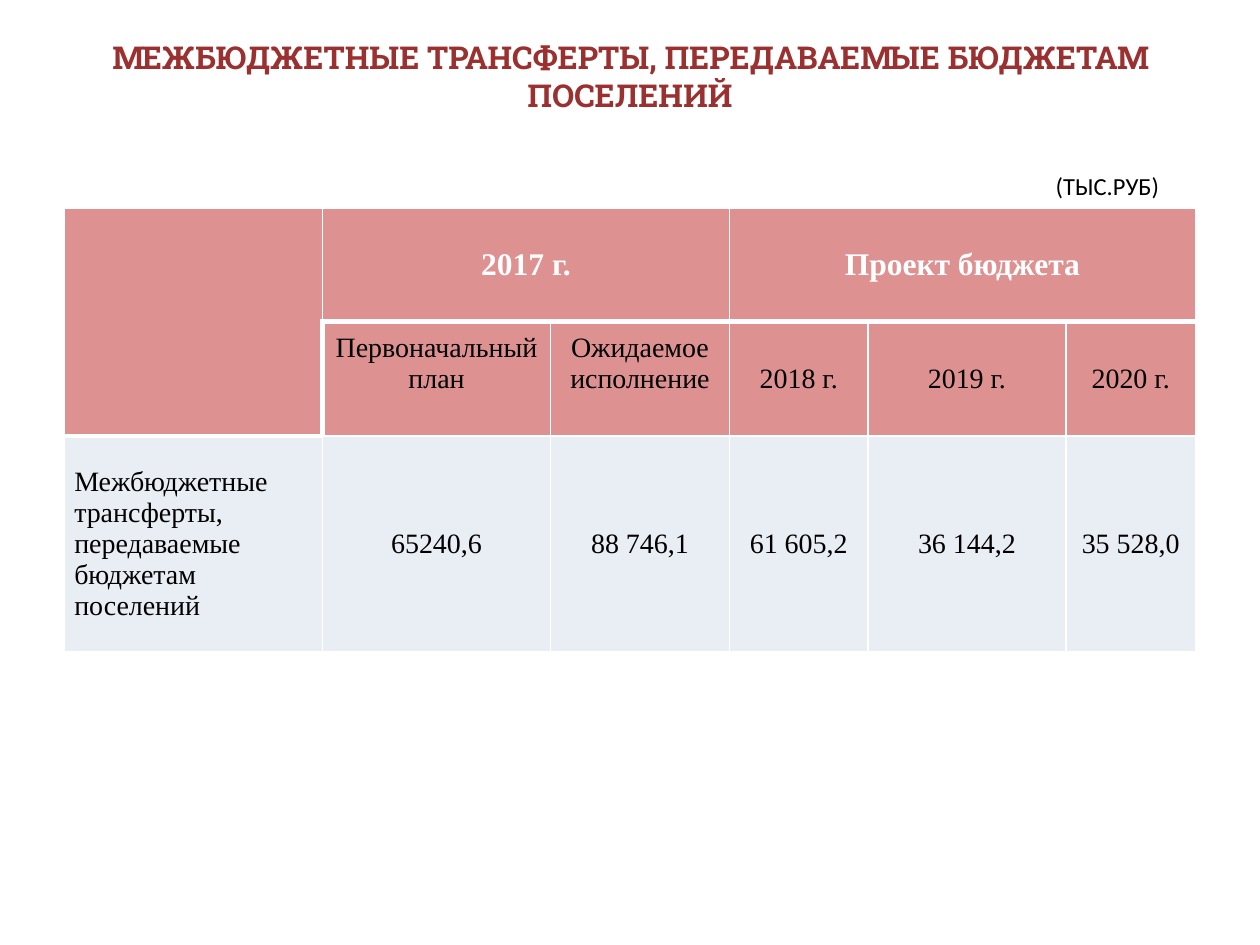
from lxml import etree
from pptx import Presentation
from pptx.dml.color import RGBColor
from pptx.enum.text import MSO_ANCHOR, PP_ALIGN
from pptx.oxml.ns import qn
from pptx.util import Inches, Pt

LEFT, CENTER = PP_ALIGN.LEFT, PP_ALIGN.CENTER
TOP, MIDDLE = MSO_ANCHOR.TOP, MSO_ANCHOR.MIDDLE

TITLE = "МЕЖБЮДЖЕТНЫЕ ТРАНСФЕРТЫ, ПЕРЕДАВАЕМЫЕ БЮДЖЕТАМ ПОСЕЛЕНИЙ"
UNIT = "(ТЫС.РУБ)"
ROWS = [
    ["", "2017 г.", "", "Проект бюджета", "", ""],
    ["", "Первоначальный план", "Ожидаемое исполнение", "2018 г.", "2019 г.", "2020 г."],
    ["Межбюджетные трансферты, передаваемые бюджетам поселений",
     "65240,6", "88 746,1", "61 605,2", "36 144,2", "35 528,0"],
]
MERGES = [((0, 0), (1, 0)), ((0, 1), (0, 2)), ((0, 3), (0, 5))]
COLUMN_WIDTHS = [2.05, 1.81, 1.42, 1.1, 1.57, 1.03]
ROW_HEIGHTS = [0.9, 0.91, 1.71]
RAISED_CELLS = {(1, 1), (1, 2)}

THEME = {
    "title": {"font": "Roboto Slab", "size": 18, "color": "9A3130", "bold": True},
    "unit": {"font": "Calibri", "size": 14, "color": "000000", "bold": False},
    "header": {"font": "Times New Roman", "size": 18, "color": "FFFFFF", "bold": True},
    "body": {"font": "Times New Roman", "size": 16, "color": "000000", "bold": False},
    "header_fill": "DD9191",
    "body_fill": "E9EDF4",
    "border": "FFFFFF",
    "thin": 1,
    "thick": 3,
}


def write(frame, text, style, align):
    frame.text = text
    para = frame.paragraphs[0]
    para.alignment = align
    for span in para.runs:
        font = span.font
        font.name = style["font"]
        font.size = Pt(style["size"])
        font.bold = style["bold"]
        font.color.rgb = RGBColor.from_string(style["color"])


def add_text(page, place, text, style, align, anchor):
    box = page.shapes.add_textbox(*(Inches(value) for value in place))
    box.text_frame.word_wrap = True
    box.text_frame.vertical_anchor = anchor
    write(box.text_frame, text, style, align)


def thick_sides(row, column):
    if column == 0:
        return {0: "", 1: "RB", 2: "T"}[row]
    return {0: "B", 1: "LT" if column == 1 else "T", 2: ""}[row]


def set_borders(cell, thick):
    properties = cell._tc.get_or_add_tcPr()
    for index, side in enumerate("LRTB"):
        width = THEME["thick" if side in thick else "thin"]
        line = etree.Element(qn(f"a:ln{side}"), w=str(Pt(width)))
        fill = etree.SubElement(line, qn("a:solidFill"))
        etree.SubElement(fill, qn("a:srgbClr"), val=THEME["border"])
        properties.insert(index, line)


def format_cell(cell, row, column):
    is_label = row == 2 and column == 0
    side_margin = 0.08 if is_label else 0.01
    cell.margin_left = cell.margin_right = Inches(side_margin)
    cell.margin_top = Inches(0.01)
    cell.margin_bottom = Inches(0.25 if (row, column) in RAISED_CELLS else 0)
    cell.vertical_anchor = MIDDLE
    cell.fill.solid()
    fill = THEME["body_fill" if row == 2 else "header_fill"]
    cell.fill.fore_color.rgb = RGBColor.from_string(fill)
    set_borders(cell, thick_sides(row, column))
    style = THEME["header" if row == 0 else "body"]
    write(cell.text_frame, ROWS[row][column], style, LEFT if is_label else CENTER)


def add_budget_table(page):
    size = (sum(COLUMN_WIDTHS), sum(ROW_HEIGHTS))
    place = (Inches(value) for value in (0.51, 1.65, *size))
    table = page.shapes.add_table(len(ROWS), len(COLUMN_WIDTHS), *place).table
    for column, width in zip(table.columns, COLUMN_WIDTHS):
        column.width = Inches(width)
    for row, height in zip(table.rows, ROW_HEIGHTS):
        row.height = Inches(height)
    for row in range(len(ROWS)):
        for column in range(len(COLUMN_WIDTHS)):
            format_cell(table.cell(row, column), row, column)
    for first, last in MERGES:
        table.cell(*first).merge(table.cell(*last))


def main():
    deck = Presentation()
    deck.slide_width, deck.slide_height = Inches(10), Inches(7.5)
    page = deck.slides.add_slide(deck.slide_layouts[6])
    add_text(page, (0.5, 0.3, 9, 0.61), TITLE, THEME["title"], CENTER, MIDDLE)
    add_budget_table(page)
    add_text(page, (8.28, 1.31, 1.26, 0.34), UNIT, THEME["unit"], LEFT, TOP)
    deck.save("out.pptx")


if __name__ == "__main__":
    main()
